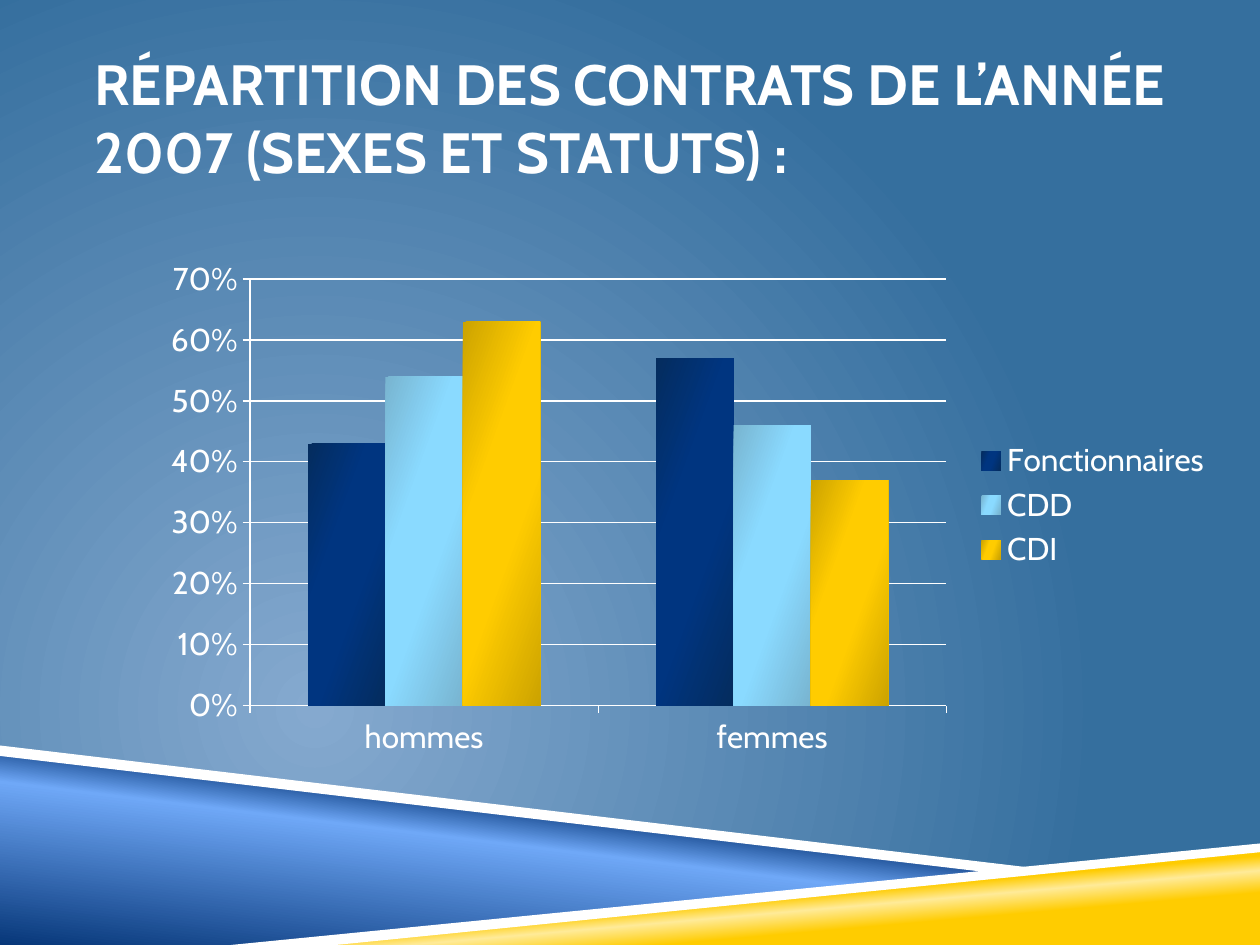
"""Build the slide on the split of 2007 contracts by sex and status."""
from typing import NamedTuple

from lxml.etree import SubElement
from pptx import Presentation
from pptx.chart.data import CategoryChartData
from pptx.dml.color import RGBColor
from pptx.enum.chart import XL_CHART_TYPE, XL_LEGEND_POSITION, XL_TICK_MARK
from pptx.enum.text import MSO_ANCHOR, MSO_AUTO_SIZE, PP_ALIGN
from pptx.oxml import parse_xml
from pptx.oxml.ns import nsdecls, qn
from pptx.util import Pt

FONT = "Cabin"
COLORS = {
    "white": "FFFFFF", "bg_light": "85A9CF", "bg_dark": "356F9E",
    "navy": "073779", "blue": "6FA8F7", "gold": "FFCC00", "cream": "FFEB99",
    "staff": "003580", "staff_edge": "042C5E",
    "cdd": "8ADAFF", "cdd_edge": "78B4D0", "cdi_edge": "CCA300",
}
RADIAL = ('<a:path path="circle"><a:fillToRect l="50000" t="100000" '
          'r="100000" b="50000"/></a:path>')


class Band(NamedTuple):
    points: list
    stops: list
    angle: int = 0


class Status(NamedTuple):
    name: str
    values: tuple
    color: str
    edge: str


BANDS = [
    Band([(0, 429.8), (570.2, 498.2), (144, 540), (0, 540)],
         [(0, "navy"), (52, "blue"), (66, "navy")], 277),
    Band([(142.6, 540), (720, 483.8), (720, 540)],
         [(28, "gold"), (40, "cream"), (48, "gold")], 265),
    Band([(0, 426.2), (0, 432), (568.8, 499), (599, 496.8)], [(0, "white")]),
    Band([(720, 481.7), (132.5, 540), (191.5, 540), (720, 487.4)],
         [(0, "white")]),
]
STATUSES = [
    Status("Fonctionnaires", (0.43, 0.57), "staff", "staff_edge"),
    Status("CDD", (0.54, 0.46), "cdd", "cdd_edge"),
    Status("CDI", (0.63, 0.37), "gold", "cdi_edge"),
]


def rgb(name: str) -> RGBColor:
    return RGBColor.from_string(COLORS[name])


def linear(angle: int) -> str:
    return f'<a:lin ang="{angle * 60000}" scaled="0"/>'


def set_gradient(parent, stops: list, direction: str) -> None:
    gs = "".join(f'<a:gs pos="{pos * 1000}"><a:srgbClr val="{COLORS[c]}"/></a:gs>'
                 for pos, c in stops)
    grad = parse_xml(f'<a:gradFill {nsdecls("a")} rotWithShape="1">'
                     f'<a:gsLst>{gs}</a:gsLst>{direction}</a:gradFill>')
    parent.replace(parent.find(qn("a:solidFill")), grad)


def add_band(slide, band: Band) -> None:
    start, *rest = band.points
    fb = slide.shapes.build_freeform(*start, scale=float(Pt(1)))
    fb.add_line_segments(rest, close=True)
    sp = fb.convert_to_shape()
    sp.shadow.inherit = False
    sp.line.fill.background()
    sp.fill.solid()
    sp.fill.fore_color.rgb = rgb(band.stops[0][1])
    if len(band.stops) > 1:
        set_gradient(sp._element.spPr, band.stops, linear(band.angle))


def set_title(slide, text: str) -> None:
    sp = slide.shapes.title
    sp.left, sp.top, sp.width, sp.height = Pt(54), Pt(21.6), Pt(612), Pt(90)
    tf = sp.text_frame
    tf.word_wrap = True
    tf.auto_size = MSO_AUTO_SIZE.NONE
    tf.vertical_anchor = MSO_ANCHOR.MIDDLE
    tf.margin_left = tf.margin_right = 0
    p = tf.paragraphs[0]
    p.alignment = PP_ALIGN.LEFT
    r = p.add_run()
    r.text = text
    r.font.name, r.font.size, r.font.bold = FONT, Pt(32.4), True
    r.font.color.rgb = rgb("white")
    slide.shapes._spTree.append(sp._element)


def set_plot_layout(chart, **fractions: float) -> None:
    area = chart._chartSpace.chart.plotArea
    layout = area.find(qn("c:layout"))
    if layout is None:
        layout = area.makeelement(qn("c:layout"))
        area.insert(0, layout)
    manual = SubElement(layout, qn("c:manualLayout"))
    settings = {"layoutTarget": "inner", "xMode": "edge", "yMode": "edge",
                **fractions}
    for tag, val in settings.items():
        SubElement(manual, qn(f"c:{tag}")).set("val", str(val))


def add_contract_chart(slide) -> None:
    data = CategoryChartData(number_format="0%")
    data.categories = ["hommes", "femmes"]
    for status in STATUSES:
        data.add_series(status.name, status.values)
    chart = slide.shapes.add_chart(XL_CHART_TYPE.COLUMN_CLUSTERED, Pt(87.84),
                                   Pt(141.84), Pt(612), Pt(293.76), data).chart
    chart.has_title = False
    chart.font.name, chart.font.size = FONT, Pt(18)
    chart.font.color.rgb = rgb("white")
    chart.has_legend = True
    chart.legend.position = XL_LEGEND_POSITION.RIGHT
    chart.legend.include_in_layout = False
    set_plot_layout(chart, x=0.09, y=0.06, w=0.65, h=0.83)

    val = chart.value_axis
    val.minimum_scale, val.maximum_scale, val.major_unit = 0, 0.7, 0.1
    val.has_major_gridlines = True
    val.tick_labels.number_format = "0%"
    val.tick_labels.number_format_is_linked = False
    for axis in (val, chart.category_axis):
        axis.major_tick_mark = XL_TICK_MARK.OUTSIDE
        axis.minor_tick_mark = XL_TICK_MARK.NONE
    for ln in (val.format.line, chart.category_axis.format.line,
               val.major_gridlines.format.line):
        ln.color.rgb = rgb("white")
        ln.width = Pt(0.75)

    plot = chart.plots[0]
    plot.gap_width, plot.overlap, plot.vary_by_categories = 150, 0, False
    for series, status in zip(plot.series, STATUSES):
        series.invert_if_negative = False
        series.format.fill.solid()
        series.format.fill.fore_color.rgb = rgb(status.color)
        stops = [(0, status.edge), (35, status.color), (60, status.color),
                 (100, status.edge)]
        set_gradient(series._element.spPr, stops, linear(20))


def main() -> None:
    prs = Presentation()
    prs.slide_width, prs.slide_height = Pt(720), Pt(540)
    slide = prs.slides.add_slide(prs.slide_layouts[5])
    slide.background.fill.solid()
    set_gradient(slide._element.find(f".//{qn('p:bgPr')}"),
                 [(0, "bg_light"), (100, "bg_dark")], RADIAL)
    for band in BANDS:
        add_band(slide, band)
    set_title(slide, "RÉPARTITION DES CONTRATS DE L’ANNÉE 2007 "
                     "(SEXES ET STATUTS) :")
    add_contract_chart(slide)
    prs.save("out.pptx")


if __name__ == "__main__":
    main()
